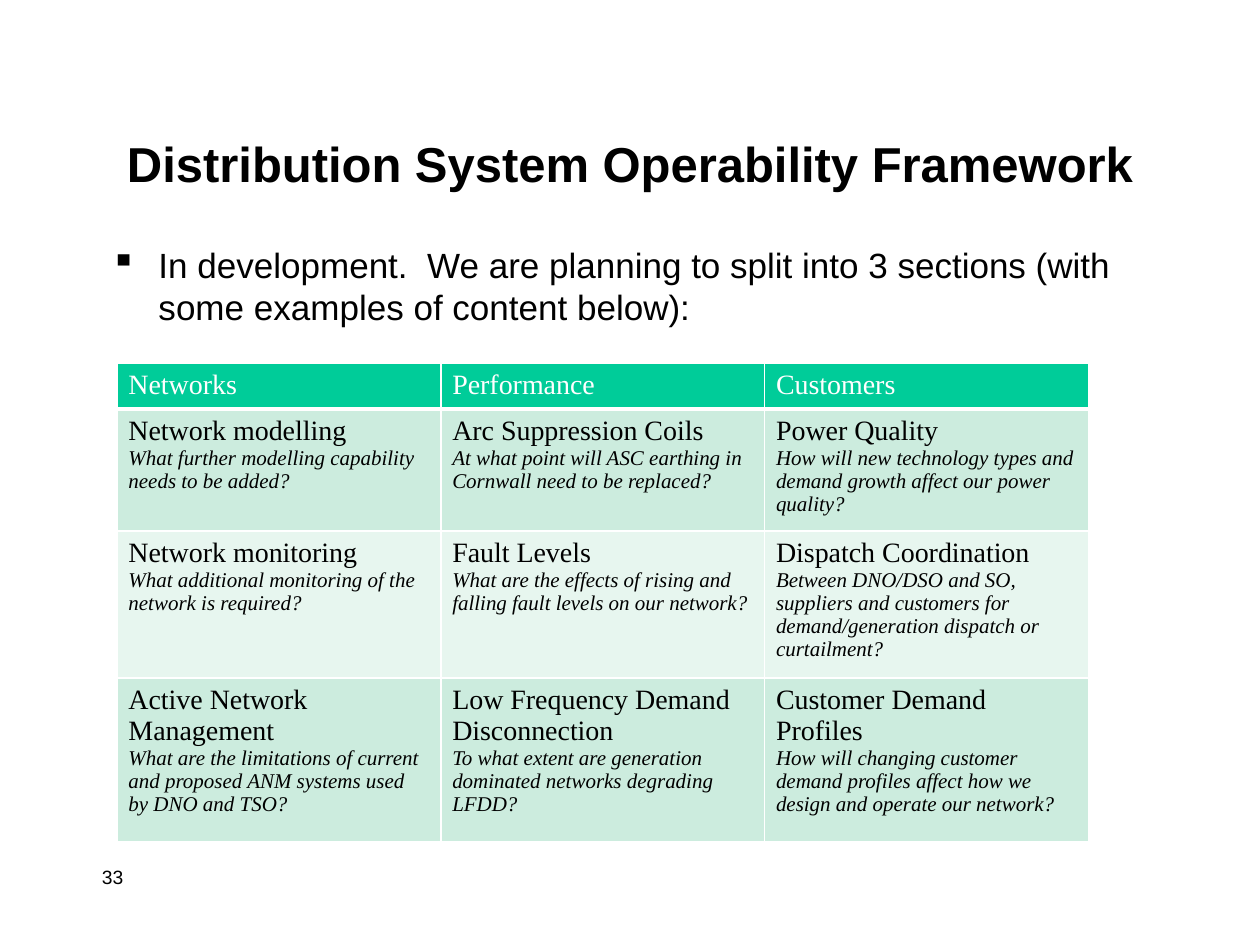
from pptx import Presentation
from pptx.dml.color import RGBColor
from pptx.enum.text import MSO_ANCHOR, PP_ALIGN
from pptx.oxml.ns import qn
from pptx.util import Inches, Pt
from lxml import etree

MIDDLE = MSO_ANCHOR.MIDDLE
TOP = MSO_ANCHOR.TOP
CENTER = PP_ALIGN.CENTER
LEFT = PP_ALIGN.LEFT

BLACK = RGBColor(0x00, 0x00, 0x00)
WHITE = RGBColor(0xFF, 0xFF, 0xFF)
GREEN = RGBColor(0x00, 0xCC, 0x99)
BAND_DARK = RGBColor(0xCC, 0xEC, 0xDE)
BAND_LIGHT = RGBColor(0xE7, 0xF6, 0xEF)

SANS = "Arial"
SERIF = "Times New Roman"

HEADINGS = ["Networks", "Performance", "Customers"]
TOPICS = [
    [
        ("Network modelling", "What further modelling capability needs to be added?"),
        ("Arc Suppression Coils", "At what point will ASC earthing in Cornwall need to be replaced?"),
        ("Power Quality", "How will new technology types and demand growth affect our power quality?"),
    ],
    [
        ("Network monitoring", "What additional monitoring of the network is required?"),
        ("Fault Levels", "What are the effects of rising and falling fault levels on our network?"),
        ("Dispatch Coordination",
         "Between DNO/DSO and SO, suppliers and customers for demand/generation dispatch or curtailment?"),
    ],
    [
        ("Active Network Management",
         "What are the limitations of current and proposed ANM systems used by DNO and TSO?"),
        ("Low Frequency Demand Disconnection",
         "To what extent are generation dominated networks degrading LFDD?"),
        ("Customer Demand Profiles",
         "How will changing customer demand profiles affect how we design and operate our network?"),
    ],
]
ROW_HEIGHTS = [0.35, 0.96, 1.04, 1.3]


def add_run(paragraph, text, size, font=SANS, color=BLACK, bold=False, italic=False):
    run = paragraph.add_run()
    run.text = text
    run.font.name = font
    run.font.size = Pt(size)
    run.font.color.rgb = color
    run.font.bold = bold
    run.font.italic = italic


def add_text(slide, box, text, size, bold=False, align=LEFT, anchor=TOP):
    shape = slide.shapes.add_textbox(*map(Inches, box))
    frame = shape.text_frame
    frame.word_wrap = True
    frame.vertical_anchor = anchor
    paragraph = frame.paragraphs[0]
    paragraph.alignment = align
    add_run(paragraph, text, size, bold=bold)
    return paragraph


def add_bullet(paragraph, symbol, indent):
    properties = paragraph._p.get_or_add_pPr()
    properties.set("marL", str(Inches(indent)))
    properties.set("indent", str(-Inches(indent)))
    etree.SubElement(properties, qn("a:buChar")).set("char", symbol)


def set_borders(cell, bottom_width):
    properties = cell._tc.get_or_add_tcPr()
    widths = {"a:lnL": 1, "a:lnR": 1, "a:lnT": 1, "a:lnB": bottom_width}
    for position, (tag, width) in enumerate(widths.items()):
        line = etree.Element(qn(tag), w=str(Pt(width)))
        fill = etree.SubElement(line, qn("a:solidFill"))
        etree.SubElement(fill, qn("a:srgbClr")).set("val", str(WHITE))
        properties.insert(position, line)


def style_cell(cell, color, bottom_width=1):
    cell.margin_left = cell.margin_right = Inches(0.09)
    cell.margin_top = cell.margin_bottom = Inches(0.05)
    cell.fill.solid()
    cell.fill.fore_color.rgb = color
    set_borders(cell, bottom_width)


def add_topic_table(slide, left, top, width):
    frame = slide.shapes.add_table(
        len(ROW_HEIGHTS), len(HEADINGS),
        Inches(left), Inches(top), Inches(width), Inches(sum(ROW_HEIGHTS)))
    table = frame.table
    for column in table.columns:
        column.width = Inches(width / len(HEADINGS))
    for row, height in zip(table.rows, ROW_HEIGHTS):
        row.height = Inches(height)

    for column, heading in enumerate(HEADINGS):
        cell = table.cell(0, column)
        style_cell(cell, GREEN, bottom_width=3)
        add_run(cell.text_frame.paragraphs[0], heading, 16, SERIF, WHITE)

    for row, topics in enumerate(TOPICS, start=1):
        for column, (topic, question) in enumerate(topics):
            cell = table.cell(row, column)
            style_cell(cell, BAND_DARK if row % 2 else BAND_LIGHT)
            add_run(cell.text_frame.paragraphs[0], topic, 16, SERIF)
            add_run(cell.text_frame.add_paragraph(), question, 12, SERIF, italic=True)


def build_framework_slide(presentation):
    slide = presentation.slides.add_slide(presentation.slide_layouts[6])
    add_text(slide, (0.75, 0.67, 8.5, 1.25), "Distribution System Operability Framework",
             28, bold=True, align=CENTER, anchor=MIDDLE)
    introduction = add_text(
        slide, (0.78, 1.88, 8.5, 0.9),
        "In development.  We are planning to split into 3 sections "
        "(with some examples of content below):", 20)
    add_bullet(introduction, "▪", 0.38)
    add_text(slide, (0.71, 6.82, 2.08, 0.5), "33", 11)
    add_topic_table(slide, 0.93, 2.88, 7.71)


def main():
    presentation = Presentation()
    presentation.slide_width = Inches(10)
    presentation.slide_height = Inches(7.5)
    build_framework_slide(presentation)
    presentation.save("out.pptx")


if __name__ == "__main__":
    main()
